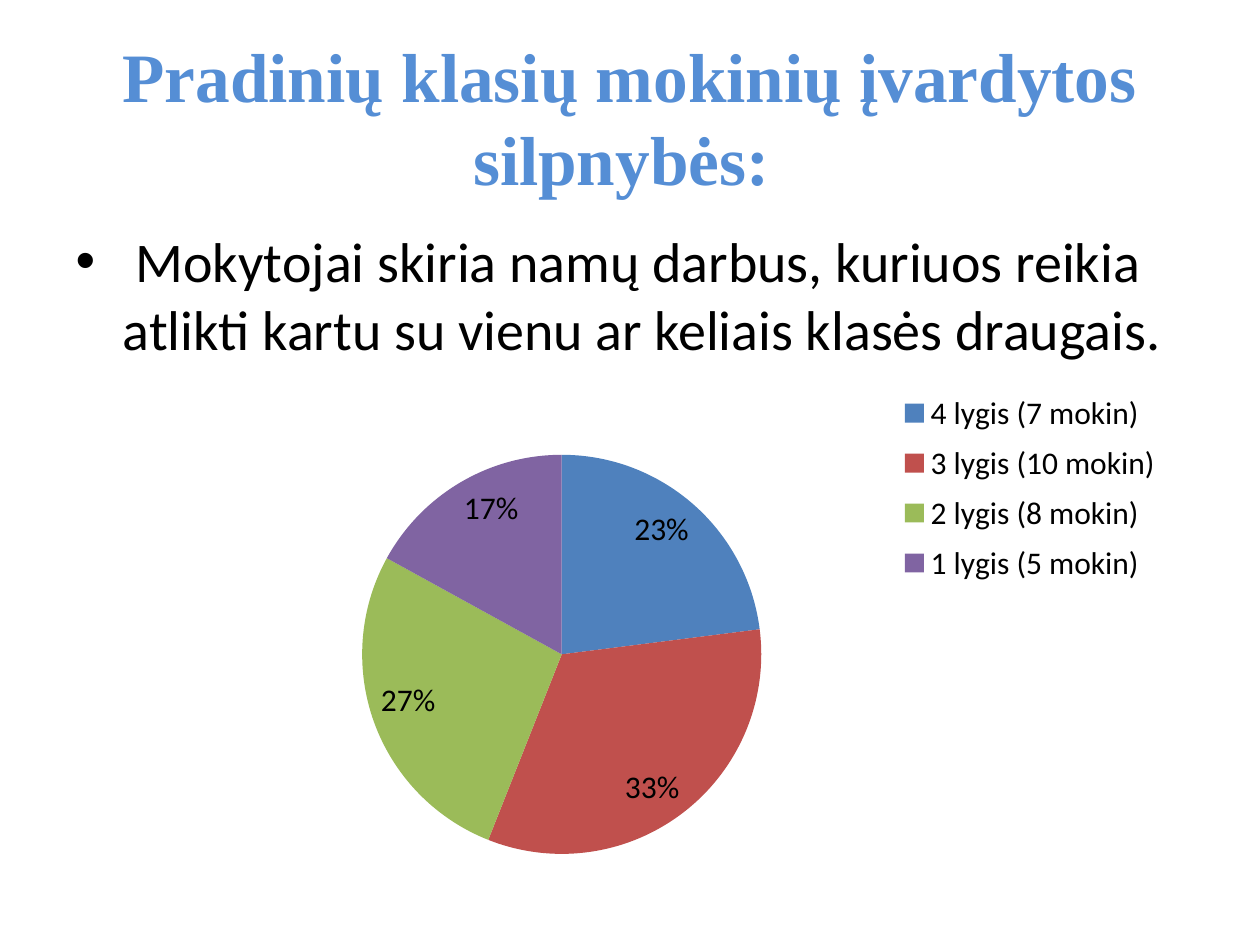
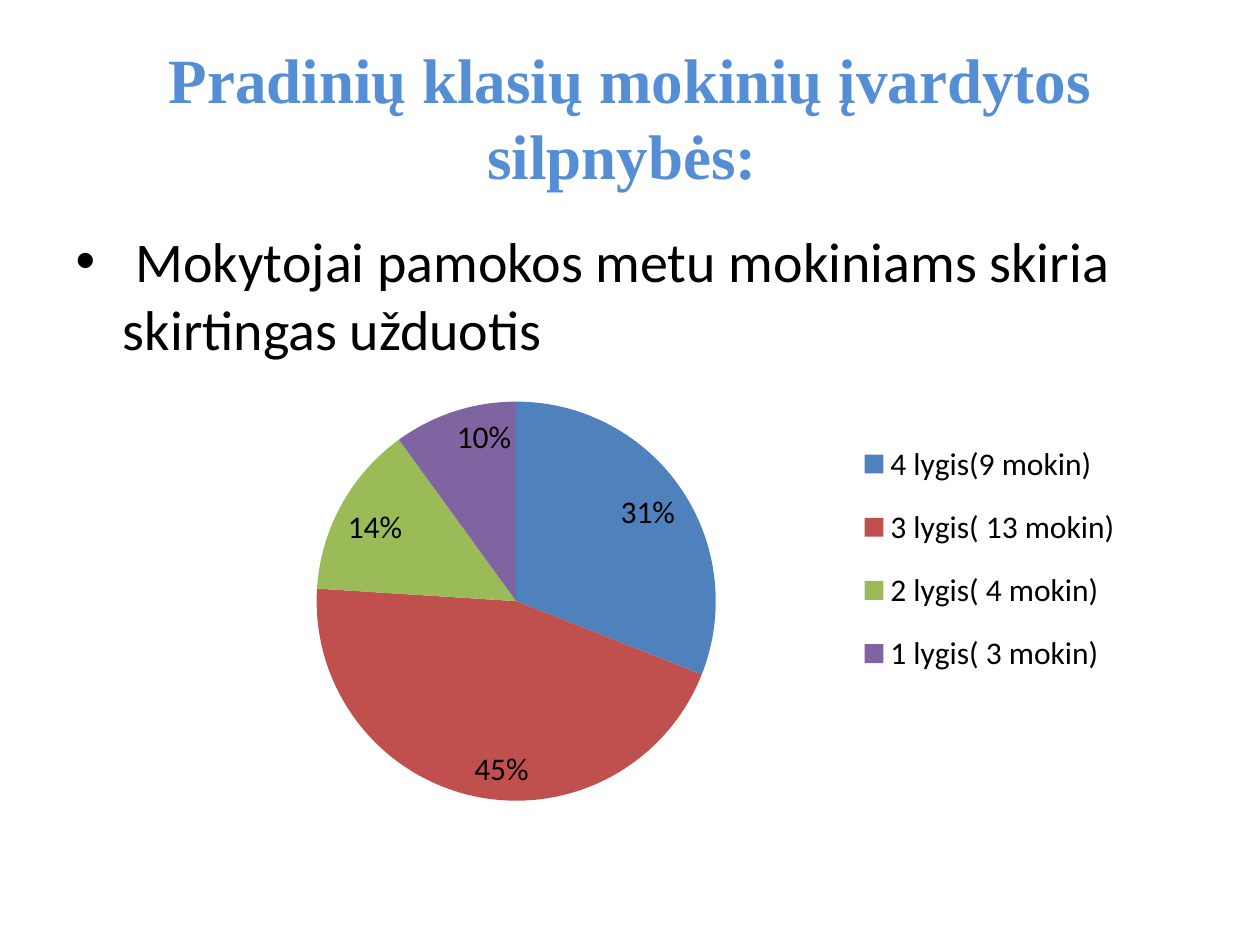
from lxml import etree
from pptx import Presentation
from pptx.chart.data import CategoryChartData
from pptx.dml.color import RGBColor
from pptx.enum.chart import XL_CHART_TYPE, XL_LABEL_POSITION, XL_LEGEND_POSITION
from pptx.enum.text import MSO_ANCHOR, PP_ALIGN
from pptx.oxml.ns import qn
from pptx.util import Inches, Pt

PIE = XL_CHART_TYPE.PIE
INSIDE = XL_LABEL_POSITION.INSIDE_END
RIGHT = XL_LEGEND_POSITION.RIGHT
MIDDLE = MSO_ANCHOR.MIDDLE
CENTER = PP_ALIGN.CENTER

COLORS = {"title": "558ED5", "text": "000000", "level 4": "4F81BD",
          "level 3": "C0504D", "level 2": "9BBB59", "level 1": "8064A2"}
LEVELS = ["level 4", "level 3", "level 2", "level 1"]
TITLE = "Pradinių klasių mokinių įvardytos silpnybės: "

SLIDES = [
    {"size": 39.6,
     "claim": " Mokytojai skiria namų darbus, kuriuos reikia atlikti kartu "
              "su vienu ar keliais klasės draugais.",
     "at": (0.91, 2.41), "plot": (0.01, 0.25, 0.83, 0.66),
     "legend": (0.74, 0.13, 0.26, 0.35),
     "shares": {"4 lygis (7 mokin)": 23, "3 lygis (10 mokin)": 33,
                "2 lygis (8 mokin)": 27, "1 lygis (5 mokin)": 17}},
    {"size": 36,
     "claim": " Mokytojai pamokos metu mokiniams skiria skirtingas užduotis",
     "at": (0.59, 2.18), "plot": (0, 0.21, 0.84, 0.66),
     "legend": (0.74, 0.24, 0.26, 0.46),
     "shares": {"4 lygis(9 mokin)": 31, "3 lygis( 13 mokin)": 45,
                "2 lygis( 4 mokin)": 14, "1 lygis( 3 mokin)": 10}},
]


def style(font, name, size, color, bold=False):
    font.name, font.size, font.bold = name, Pt(size), bold
    font.color.rgb = RGBColor.from_string(COLORS[color])


def place(part, index, box, inner=False):
    """Give a chart part a manual layout, in fractions of the chart."""
    for old in part.findall(qn("c:layout")):
        part.remove(old)
    layout = etree.Element(qn("c:layout"))
    part.insert(index, layout)
    manual = etree.SubElement(layout, qn("c:manualLayout"))
    pairs = [("layoutTarget", "inner")] if inner else []
    pairs += [("xMode", "edge"), ("yMode", "edge"), *zip("xywh", box)]
    for tag, val in pairs:
        etree.SubElement(manual, qn("c:" + tag), val=str(val))


prs = Presentation()
prs.slide_width, prs.slide_height = Inches(10), Inches(7.5)

for item in SLIDES:
    slide = prs.slides.add_slide(prs.slide_layouts[1])
    title, body = slide.placeholders

    title.left, title.top = Inches(0.5), Inches(0.3)
    title.width, title.height = Inches(9), Inches(1.25)
    title.text_frame.text = TITLE
    title.text_frame.vertical_anchor = MIDDLE
    head = title.text_frame.paragraphs[0]
    head.alignment = CENTER
    style(head.font, "Times New Roman", item["size"], "title", True)

    body.left, body.top = Inches(0.5), Inches(1.75)
    body.width, body.height = Inches(9), Inches(4.95)
    body.text_frame.text = item["claim"]
    style(body.text_frame.paragraphs[0].font, "Calibri", 32, "text")

    data = CategoryChartData()
    data.categories = list(item["shares"])
    data.add_series("Series 1", list(item["shares"].values()))
    left, top = item["at"]
    chart = slide.shapes.add_chart(PIE, Inches(left), Inches(top),
                                   Inches(8.35), Inches(4.8), data).chart
    style(chart.font, "Calibri", 18, "text")
    chart.has_title = False
    chart.has_legend = True
    chart.legend.position = RIGHT
    chart.legend.include_in_layout = False

    pie = chart.plots[0]
    pie.vary_by_categories = True
    pie.has_data_labels = True
    labels = pie.data_labels
    labels.show_percentage, labels.show_value = True, False
    labels.number_format, labels.number_format_is_linked = "0%", False
    labels.position = INSIDE
    for i, level in enumerate(LEVELS):
        fill = pie.series[0].points[i].format.fill
        fill.solid()
        fill.fore_color.rgb = RGBColor.from_string(COLORS[level])

    area = chart.element.find(".//" + qn("c:plotArea"))
    legend = chart.element.find(".//" + qn("c:legend"))
    place(area, 0, item["plot"], inner=True)
    place(legend, 1, item["legend"])

prs.save("out.pptx")
